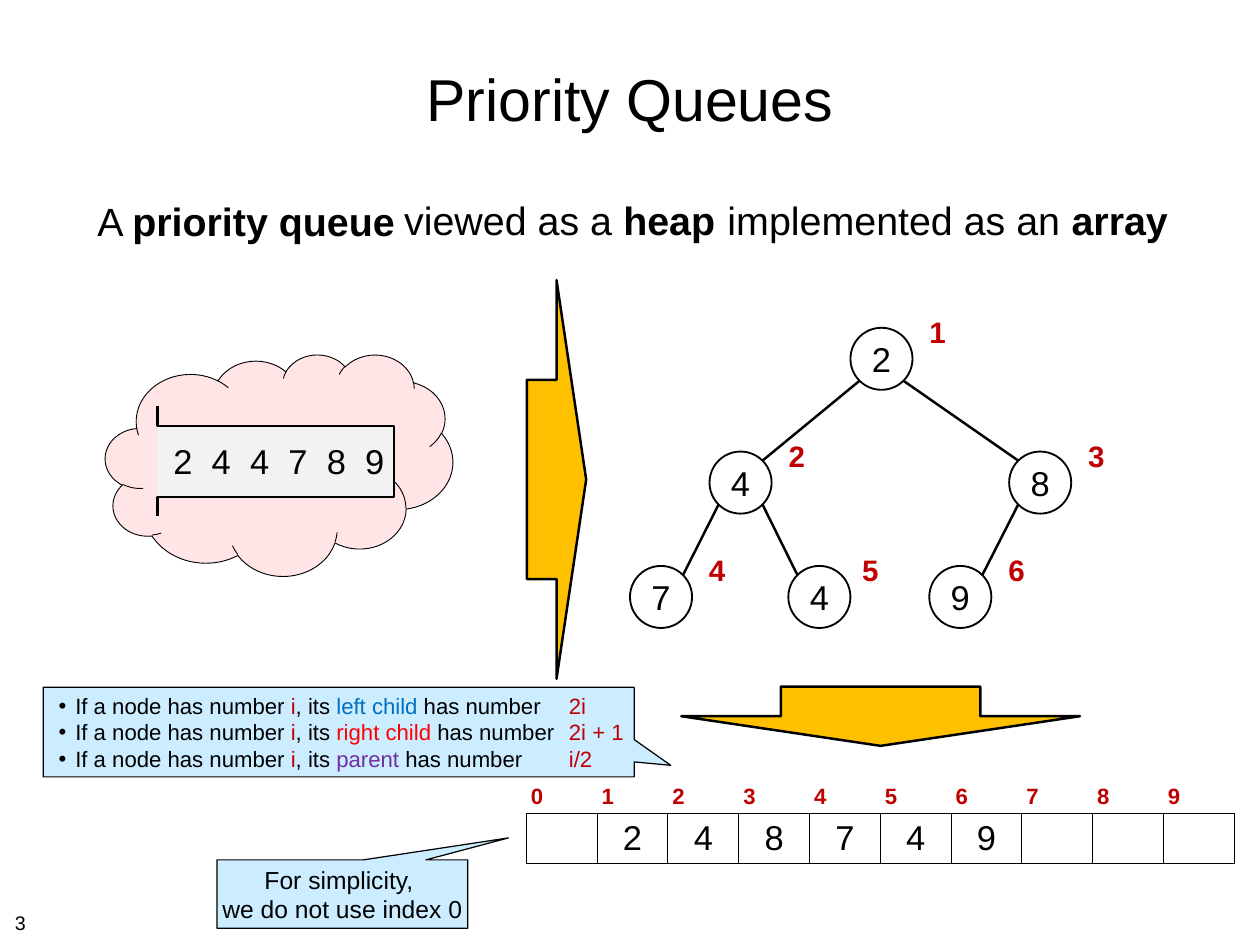
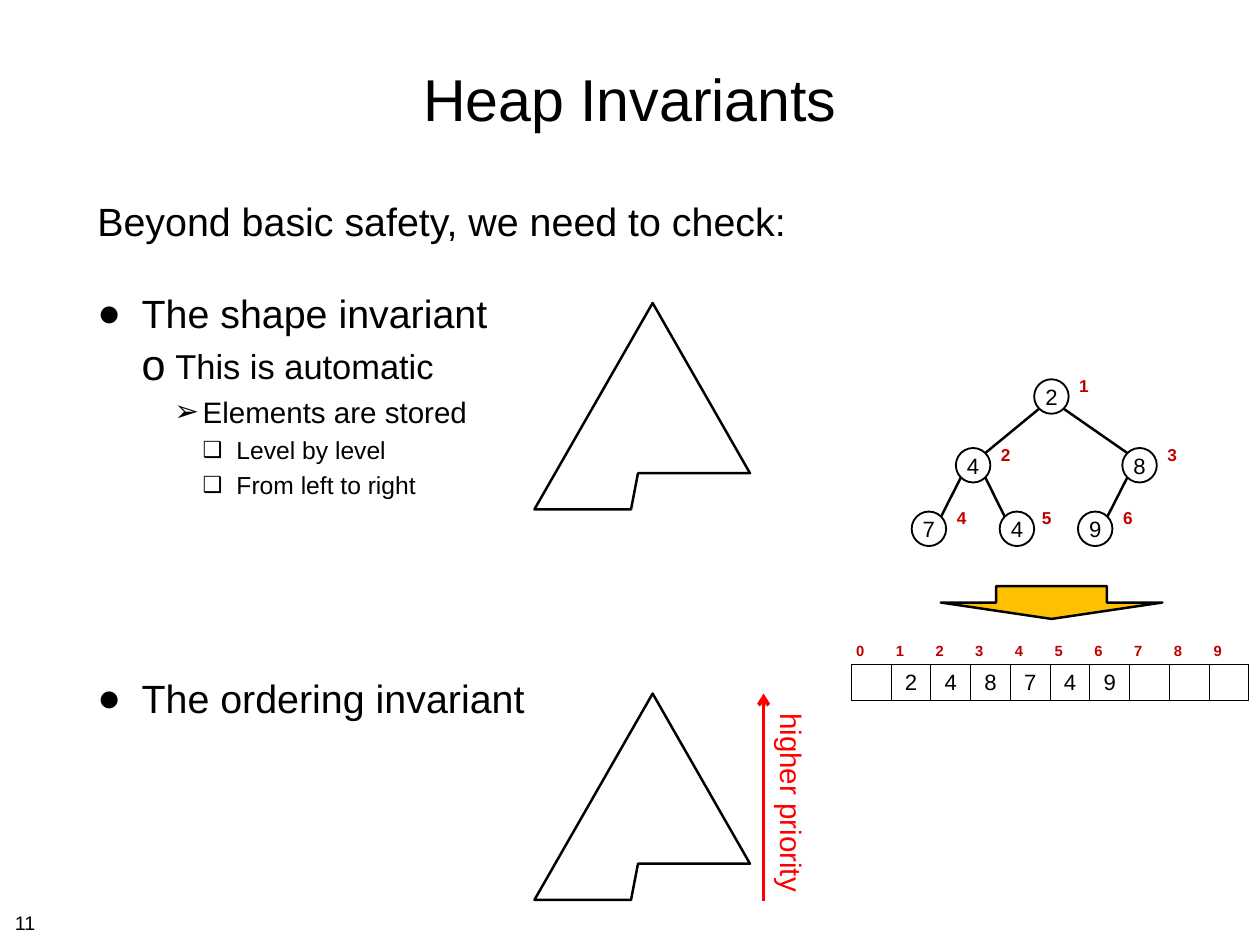
"""Builds two lecture slides on priority queues and heap invariants."""
from lxml import etree
from pptx import Presentation
from pptx.dml.color import RGBColor
from pptx.enum.shapes import MSO_CONNECTOR, MSO_SHAPE
from pptx.enum.text import MSO_ANCHOR, PP_ALIGN
from pptx.oxml.ns import qn
from pptx.util import Cm, Pt

LEFT, CENTER = PP_ALIGN.LEFT, PP_ALIGN.CENTER
TOP, MIDDLE, BOTTOM = MSO_ANCHOR.TOP, MSO_ANCHOR.MIDDLE, MSO_ANCHOR.BOTTOM
STRAIGHT = MSO_CONNECTOR.STRAIGHT
OVAL, CLOUD, RECTANGLE = MSO_SHAPE.OVAL, MSO_SHAPE.CLOUD, MSO_SHAPE.RECTANGLE
DOWN_ARROW, CALLOUT = MSO_SHAPE.DOWN_ARROW, MSO_SHAPE.RECTANGULAR_CALLOUT

BLACK = RGBColor(0x00, 0x00, 0x00)
INDEX_RED = RGBColor(0xC0, 0x00, 0x00)
RED = RGBColor(0xFF, 0x00, 0x00)
BLUE = RGBColor(0x00, 0x70, 0xC0)
PURPLE = RGBColor(0x70, 0x30, 0xA0)
GOLD = RGBColor(0xFF, 0xC0, 0x00)
PINK = RGBColor(0xFF, 0xE5, 0xE5)
PALE_GREY = RGBColor(0xF2, 0xF2, 0xF2)
PALE_BLUE = RGBColor(0xCC, 0xEC, 0xFF)

FONT = "Arial"
TIGHT = (0.15, 0.15, 0.15, 0.15)
NORMAL = (0.25, 0.13, 0.25, 0.13)
NARROW = (0.13, 0.13, 0.13, 0.13)
TITLE_FRAME = (2.64, 0.71, 30.84, 4.17)
BODY_FRAME = (2.64, 5.51, 30.84, 19.15)
NUMBER_FRAME = (0.28, 25.98, 0.94, 0.89)

HEAP_VALUES = ["2", "4", "8", "7", "4", "9"]
HEAP_OFFSETS = [(0, 0), (-4.04, 3.55), (4.55, 3.55),
                (-6.32, 6.83), (-1.78, 6.83), (2.26, 6.83)]
LABEL_SHIFTS = [0, 0, 0, 0, -0.15, 0]
ARRAY_CELLS = [""] + HEAP_VALUES + [""] * 3
NODE_DIAMETER = 1.78

LARGE_HEAP = {"root": (25.27, 10.29), "scale": 1, "size": 28,
              "label": (1.61, -0.77), "label_size": 24}
SMALL_HEAP = {"root": (30.14, 11.37), "scale": 5 / 9, "size": 18,
              "label": (0.84, -0.34), "label_size": 14}
LARGE_ARRAY = {"corner": (15.09, 22.3), "column": 2.03, "rows": (0.94, 1.39),
               "sizes": (18, 28)}
SMALL_ARRAY = {"corner": (24.41, 18.29), "column": 1.14, "rows": (0.75, 1.03),
               "sizes": (12, 18)}

QUEUE_TEXT = "\t".join("244789")
QUEUE_PITCH = 1.1
QUEUE_OUTLINE = [(4.51, 11.63), (4.51, 12.22), (11.29, 12.22),
                 (11.29, 14.25), (4.51, 14.25), (4.51, 14.81)]
HEADLINE = [
    (BODY_FRAME, LEFT, TIGHT, [("A ",), ("priority queue", BLACK, True)]),
    ((11.28, 5.49, 9.53, 1.63), CENTER, NORMAL,
     [("viewed as a ",), ("heap", BLACK, True)]),
    ((20.5, 5.49, 13.34, 1.63), CENTER, NORMAL,
     [("implemented as an ",), ("array", BLACK, True)]),
]
NUMBERING_RULES = [
    ("left child", BLUE, "2i"),
    ("right child", RED, "2i + 1"),
    ("parent", PURPLE, "i/2"),
]
INVARIANTS = [
    ("Beyond basic safety, we need to check:", 32, 0, {}),
    ("The shape invariant", 32, 36, {"bullet": "●", "indent": (1.27, 1.27)}),
    ("This is automatic", 28, 7,
     {"bullet": "o", "indent": (2.24, 0.97), "percent": 125}),
    ("Elements are stored", 24, 6, {"bullet": "➢", "indent": (3.02, 0.81)}),
    ("Level by level", 20, 4.8,
     {"bullet": "❑", "indent": (3.99, 0.97), "percent": 90}),
    ("From left to right", 20, 4.8,
     {"bullet": "❑", "indent": (3.99, 0.97), "percent": 90}),
    ("The ordering invariant", 32, 142,
     {"bullet": "●", "indent": (1.27, 1.27)}),
]
TREE_OUTLINE = [(3.39, 0), (0, 5.92), (2.77, 5.92), (2.97, 4.88), (6.18, 4.88)]
TREE_LEFT, TREE_TOPS = 15.32, (8.69, 19.89)


def set_frame(frame, margins, anchor, wrap):
    frame.margin_left, frame.margin_top, frame.margin_right, frame.margin_bottom = (
        Cm(margin) for margin in margins)
    frame.vertical_anchor = anchor
    frame.word_wrap = wrap


def add_span(para, size, text, color=BLACK, bold=False):
    span = para.add_run()
    span.text = text
    span.font.name = FONT
    span.font.size = Pt(size)
    span.font.color.rgb = color
    span.font.bold = bold


def write(frame, lines, size, align=LEFT, margins=NORMAL, anchor=TOP, wrap=False):
    set_frame(frame, margins, anchor, wrap)
    for number, spans in enumerate(lines):
        para = frame.add_paragraph() if number else frame.paragraphs[0]
        para.alignment = align
        for span in spans:
            add_span(para, size, *span)


def add_bullet(para, bullet, indent, percent=100):
    properties = para._p.get_or_add_pPr()
    margin, hanging = indent
    properties.set("marL", str(Cm(margin)))
    properties.set("indent", str(-Cm(hanging)))
    etree.SubElement(properties, qn("a:buSzPct")).set("val", str(percent * 1000))
    etree.SubElement(properties, qn("a:buFont")).set("typeface", FONT)
    etree.SubElement(properties, qn("a:buChar")).set("char", bullet)


def add_tabs(para, stops):
    tabs = etree.SubElement(para._p.get_or_add_pPr(), qn("a:tabLst"))
    for stop in stops:
        tab = etree.SubElement(tabs, qn("a:tab"))
        tab.set("pos", str(Cm(stop)))
        tab.set("algn", "l")


def add_text(slide, place, lines, size, **layout):
    box = slide.shapes.add_textbox(*(Cm(length) for length in place))
    write(box.text_frame, lines, size, **layout)
    return box


def paint(shape, fill, line_width):
    shape.shadow.inherit = False
    if fill is None:
        shape.fill.background()
    else:
        shape.fill.solid()
        shape.fill.fore_color.rgb = fill
    if line_width:
        shape.line.color.rgb = BLACK
        shape.line.width = Pt(line_width)
    else:
        shape.line.fill.background()


def add_shape(slide, kind, place, fill=None, line_width=2):
    shape = slide.shapes.add_shape(kind, *(Cm(length) for length in place))
    paint(shape, fill, line_width)
    return shape


def add_outline(slide, points, close):
    corners = [(Cm(x), Cm(y)) for x, y in points]
    builder = slide.shapes.build_freeform(*corners[0])
    builder.add_line_segments(corners[1:], close=close)
    paint(builder.convert_to_shape(), None, 2)


def add_line(slide, start, end, color=BLACK, width=2):
    line = slide.shapes.add_connector(
        STRAIGHT, *(Cm(length) for length in (*start, *end)))
    line.line.color.rgb = color
    line.line.width = Pt(width)
    etree.SubElement(line._element.spPr, qn("a:effectLst"))
    return line


def add_heap(slide, root, scale, size, label, label_size):
    centers = [(root[0] + x * scale, root[1] + y * scale) for x, y in HEAP_OFFSETS]
    diameter = NODE_DIAMETER * scale
    reach = diameter / 2 * 0.71
    for child in range(1, len(centers)):
        parent_x, parent_y = centers[(child - 1) // 2]
        x, y = centers[child]
        side = reach if x > parent_x else -reach
        add_line(slide, (parent_x + side, parent_y + reach), (x - side, y - reach))
    label_width, label_height = label_size / 24, label_size * 0.05 + 0.1
    for number, (x, y) in enumerate(centers):
        node = add_shape(slide, OVAL, (x - diameter / 2, y - diameter / 2,
                                       diameter, diameter), None, 1.5)
        write(node.text_frame, [[(HEAP_VALUES[number],)]], size,
              align=CENTER, margins=TIGHT, anchor=MIDDLE)
        label_x = x + label[0] + LABEL_SHIFTS[number] * scale
        label_y = y + label[1]
        add_text(slide, (label_x - label_width / 2, label_y - label_height / 2,
                         label_width, label_height),
                 [[(str(number + 1), INDEX_RED, True)]], label_size, align=CENTER)


def add_borders(cell):
    properties = cell._tc.get_or_add_tcPr()
    for position, side in enumerate(("a:lnL", "a:lnR", "a:lnT", "a:lnB")):
        border = etree.Element(qn(side), w=str(Pt(1)))
        fill = etree.SubElement(border, qn("a:solidFill"))
        etree.SubElement(fill, qn("a:srgbClr")).set("val", str(BLACK))
        properties.insert(position, border)


def add_array(slide, corner, column, rows, sizes):
    count = len(ARRAY_CELLS)
    table = slide.shapes.add_table(
        2, count, Cm(corner[0]), Cm(corner[1]),
        Cm(column * count), Cm(sum(rows))).table
    table.first_row = table.horz_banding = False
    for row, height in zip(table.rows, rows):
        row.height = Cm(height)
    for index, value in enumerate(ARRAY_CELLS):
        table.columns[index].width = Cm(column)
        header, body = table.cell(0, index), table.cell(1, index)
        for cell in (header, body):
            cell.fill.background()
            cell.margin_top = cell.margin_bottom = Cm(0.13)
        header.margin_left = Cm(0.13)
        header.vertical_anchor, body.vertical_anchor = BOTTOM, MIDDLE
        add_span(header.text_frame.paragraphs[0], sizes[0],
                 str(index), INDEX_RED, True)
        para = body.text_frame.paragraphs[0]
        para.alignment = CENTER
        if value:
            add_span(para, sizes[1], value)
        add_borders(body)


def add_callout(slide, place, pointer, lines, size, **layout):
    callout = add_shape(slide, CALLOUT, place, PALE_BLUE, 1)
    callout.adjustments[0], callout.adjustments[1] = pointer
    write(callout.text_frame, lines, size, margins=NARROW, anchor=MIDDLE, **layout)
    return callout


def add_page(deck, title, number):
    slide = deck.slides.add_slide(deck.slide_layouts[6])
    add_text(slide, TITLE_FRAME, [[(title,)]], 48, align=CENTER,
             margins=TIGHT, anchor=MIDDLE, wrap=True)
    add_text(slide, NUMBER_FRAME, [[(number,)]], 16, margins=TIGHT)
    return slide


def add_queue_slide(deck):
    slide = add_page(deck, "Priority Queues", "3")
    for place, align, margins, spans in HEADLINE:
        add_text(slide, place, [spans], 32, align=align, margins=margins,
                 wrap=align == LEFT)
    add_array(slide, **LARGE_ARRAY)
    add_heap(slide, **LARGE_HEAP)
    add_shape(slide, DOWN_ARROW, (19.53, 19.69, 11.43, 1.7), GOLD)
    add_shape(slide, DOWN_ARROW, (10.24, 12.9, 11.43, 1.7), GOLD).rotation = 270
    add_shape(slide, CLOUD, (3.02, 10.16, 9.96, 6.35), PINK, 0.75)
    add_shape(slide, RECTANGLE, (4.51, 12.22, 6.78, 2.03), PALE_GREY, 0)
    add_outline(slide, QUEUE_OUTLINE, False)
    queue = add_text(slide, (4.72, 12.5, 6.8, 1.45), [[(QUEUE_TEXT,)]], 28, wrap=True)
    add_tabs(queue.text_frame.paragraphs[0],
             [QUEUE_PITCH * step for step in range(1, 6)])
    add_callout(slide, (6.22, 24.66, 7.19, 1.96), (0.663, -0.822),
                [[("For simplicity, ",)], [("we do not use index 0",)]], 20,
                align=CENTER)
    rules = [[("If a node has number ",), ("i", INDEX_RED), (", its ",),
              (relative, color), (" has number\t",), (formula, INDEX_RED)]
             for relative, color, formula in NUMBERING_RULES]
    callout = add_callout(slide, (1.24, 19.71, 16.94, 2.57), (0.562, 0.371),
                          rules, 18, wrap=True)
    for para in callout.text_frame.paragraphs:
        add_bullet(para, "•", (0.79, 0.48))
        add_tabs(para, [14.94])


def add_invariant_slide(deck):
    slide = add_page(deck, "Heap Invariants", "11")
    frame = add_text(slide, BODY_FRAME, [], 32, margins=TIGHT, wrap=True).text_frame
    for number, (text, size, gap, bullet) in enumerate(INVARIANTS):
        para = frame.add_paragraph() if number else frame.paragraphs[0]
        para.space_before = Pt(gap)
        if bullet:
            add_bullet(para, **bullet)
        add_span(para, size, text)
    for top in TREE_TOPS:
        add_outline(slide, [(TREE_LEFT + x, top + y) for x, y in TREE_OUTLINE], True)
    arrow = add_line(slide, (21.89, 25.83), (21.89, 19.89), RED, 3)
    etree.SubElement(arrow.line._get_or_add_ln(), qn("a:tailEnd")).set("type", "arrow")
    add_text(slide, (19.86, 22.38, 5.69, 1.27), [[("higher priority", RED)]], 24,
             align=CENTER).rotation = 90
    add_array(slide, **SMALL_ARRAY)
    add_heap(slide, **SMALL_HEAP)
    add_shape(slide, DOWN_ARROW, (26.97, 16.81, 6.35, 0.94), GOLD)


def main():
    deck = Presentation()
    deck.slide_width, deck.slide_height = Cm(36.12), Cm(27.1)
    add_queue_slide(deck)
    add_invariant_slide(deck)
    deck.save("out.pptx")


if __name__ == "__main__":
    main()
